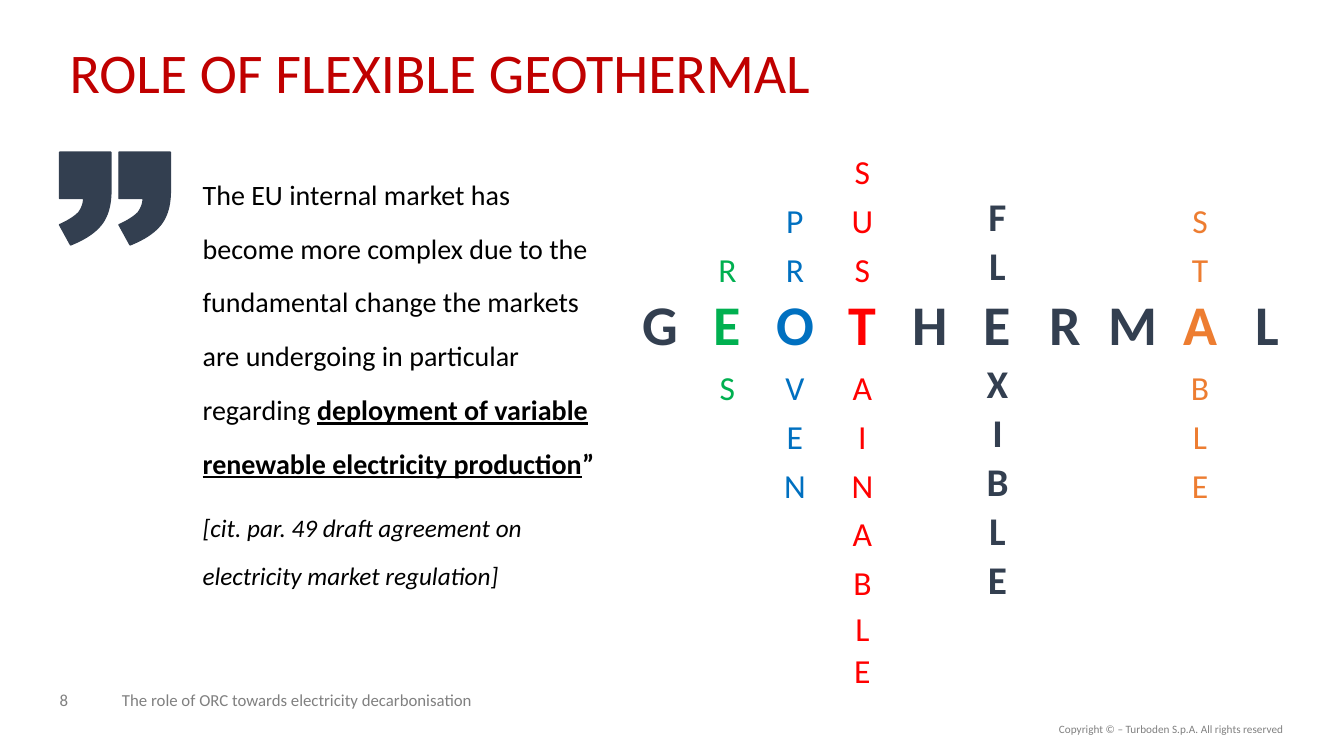
from pptx import Presentation
from pptx.dml.color import RGBColor as RGB
from pptx.enum.text import MSO_ANCHOR as Anchor, MSO_AUTO_SIZE as Auto, PP_ALIGN as Align
from pptx.util import Inches, Pt
from lxml.etree import SubElement

TITLE = "ROLE OF FLEXIBLE GEOTHERMAL"
# Each run: text, bold, underline, italic
QUOTE = [
    (20, [("The EU internal market has become more complex due to the fundamental "
           "change the markets are undergoing in particular regarding ", 0, 0, 0),
          ("deployment of variable renewable electricity production", 1, 1, 0),
          ("”", 1, 0, 0)]),
    (18, [("[cit. par. 49 draft agreement on electricity market regulation]", 0, 0, 1)]),
]
ACROSS, CROSS = "GEOTHERMAL", 3
# Each word: text, column, first row, colour, bold
DOWN = [
    ("RES", 1, 2, "green", False),
    ("PROVEN", 2, 1, "blue", False),
    ("SUSTAINABLE", 3, 0, "red", False),
    ("FLEXIBLE", 5, 1, "navy", True),
    ("STABLE", 8, 1, "orange", False),
]
FOOTER = "The role of ORC towards electricity decarbonisation"
PAGE = "8"
RIGHTS = "Copyright © – Turboden S.p.A. All rights reserved"


class Theme:
    font = "Calibri"
    title, across, bold, down, foot, rights = 40, 40, 28, 24, 12, 8
    ink = dict(black="000000", crimson="C00000", navy="333F50", green="00B050",
               blue="0070C0", red="FF0000", orange="ED7D31", grey="808080")


WIDE, HIGH = 13.33, 7.5
LEFT, TOP = 0.59, 1.51
GRID = (6.21, 1.5)
COL, ROW, EDGE, MID = 0.67, 0.45, 0.39, 0.64
HEIGHTS = [EDGE] + [ROW] * 2 + [MID] + [ROW] * 6 + [EDGE]
MARK, PITCH = 0.51, 0.59


def ink(name):
    return RGB.from_string(Theme.ink[name])


def style(para, size, colour, align=Align.LEFT, bold=False):
    para.alignment = align
    font = para.font
    font.name, font.size, font.bold = Theme.font, Pt(size), bold
    font.color.rgb = ink(colour)


def place(shape, *box):
    shape.left, shape.top, shape.width, shape.height = map(Inches, box)


def add_title(slide):
    title = slide.shapes.title
    place(title, LEFT, 0.4, 10.51, 0.7)
    title.text_frame.text = TITLE
    title.text_frame.auto_size = Auto.NONE
    para = title.text_frame.paragraphs[0]
    para.line_spacing = 0.9
    style(para, Theme.title, "crimson")


def add_quote(slide):
    body = slide.placeholders[1]
    place(body, 1.91, TOP, 4.09, 5.13)
    frame = body.text_frame
    frame.auto_size = Auto.NONE
    for n, (size, runs) in enumerate(QUOTE):
        para = frame.add_paragraph() if n else frame.paragraphs[0]
        para.line_spacing = 1.6
        para.space_before = Pt(10 if n else 0)
        props = para._p.get_or_add_pPr()
        props.set("marL", "0")
        props.set("indent", "0")
        SubElement(props, props.tag.replace("pPr", "buNone"))
        style(para, size, "black")
        for text, bold, under, slant in runs:
            run = para.add_run()
            run.text = text
            font = run.font
            font.bold, font.underline, font.italic = map(bool, (bold, under, slant))


def add_words(slide):
    """Lay the crossing words out in a table, one letter to a cell."""
    letters = {(CROSS, c): (ch, Theme.across, "navy", True)
               for c, ch in enumerate(ACROSS)}
    for word, col, first, colour, bold in DOWN:
        for row, ch in enumerate(word, first):
            size = Theme.bold if bold else Theme.down
            if row == CROSS:
                size = Theme.across
            letters[row, col] = (ch, size, colour, bold or row == CROSS)
    box = (*GRID, COL * len(ACROSS), sum(HEIGHTS))
    table = slide.shapes.add_table(len(HEIGHTS), len(ACROSS), *map(Inches, box)).table
    table.first_row = table.horz_banding = False
    for col in table.columns:
        col.width = Inches(COL)
    for r, high in enumerate(HEIGHTS):
        table.rows[r].height = Inches(high)
        for c in range(len(ACROSS)):
            cell = table.cell(r, c)
            cell.fill.background()
            cell.vertical_anchor = Anchor.BOTTOM
            cell.margin_left = cell.margin_right = cell.margin_top = Inches(0.01)
            cell.margin_bottom = 0
            if (r, c) in letters:
                text, size, colour, bold = letters[r, c]
                cell.text = text
                style(cell.text_frame.paragraphs[0], size, colour, Align.CENTER, bold)


def curve(a, b, c, d, steps=12):
    """Points along a cubic curve, without its start."""
    for n in range(1, steps + 1):
        t = n / steps
        u = 1 - t
        yield tuple(u**3 * i + 3 * u * u * t * j + 3 * u * t * t * k + t**3 * m
                    for i, j, k, m in zip(a, b, c, d))


def add_marks(slide):
    outline = [(MARK, 0), (MARK, 0.38),
               *curve((MARK, 0.38), (MARK, 0.52), (0.48, 0.63), (0.42, 0.71)),
               *curve((0.42, 0.71), (0.36, 0.79), (0.26, 0.86), (0.11, 0.92)),
               (0, 0.72),
               *curve((0, 0.72), (0.09, 0.68), (0.15, 0.64), (0.19, 0.6)),
               *curve((0.19, 0.6), (0.22, 0.56), (0.24, 0.51), (0.24, 0.46)),
               (0, 0.46)]
    group = slide.shapes.add_group_shape()
    for n in range(2):
        x = LEFT + n * PITCH
        pen = group.shapes.build_freeform(Inches(x), Inches(TOP))
        pen.add_line_segments([(Inches(x + i), Inches(TOP + j)) for i, j in outline])
        mark = pen.convert_to_shape()
        mark.shadow.inherit = False
        mark.fill.solid()
        mark.fill.fore_color.rgb = mark.line.color.rgb = ink("navy")
        mark.line.width = Pt(1)


def add_note(slide, text, box, size, align=Align.LEFT, inset=True):
    frame = slide.shapes.add_textbox(*map(Inches, box)).text_frame
    frame.word_wrap = True
    if not inset:
        frame.vertical_anchor = Anchor.BOTTOM
        frame.margin_left = frame.margin_right = 0
        frame.margin_top = frame.margin_bottom = 0
    frame.text = text
    style(frame.paragraphs[0], size, "grey", align)


def main():
    deck = Presentation()
    deck.slide_width, deck.slide_height = Inches(WIDE), Inches(HIGH)
    slide = deck.slides.add_slide(deck.slide_layouts[1])
    add_title(slide)
    add_quote(slide)
    add_words(slide)
    add_marks(slide)
    add_note(slide, FOOTER, (1.21, 6.65, 4.72, 0.39), Theme.foot, inset=False)
    add_note(slide, PAGE, (LEFT, 6.65, 0.49, 0.39), Theme.foot, inset=False)
    add_note(slide, RIGHTS, (9.33, 7.12, 3.5, 0.24), Theme.rights, Align.RIGHT)
    deck.save("out.pptx")


if __name__ == "__main__":
    main()
